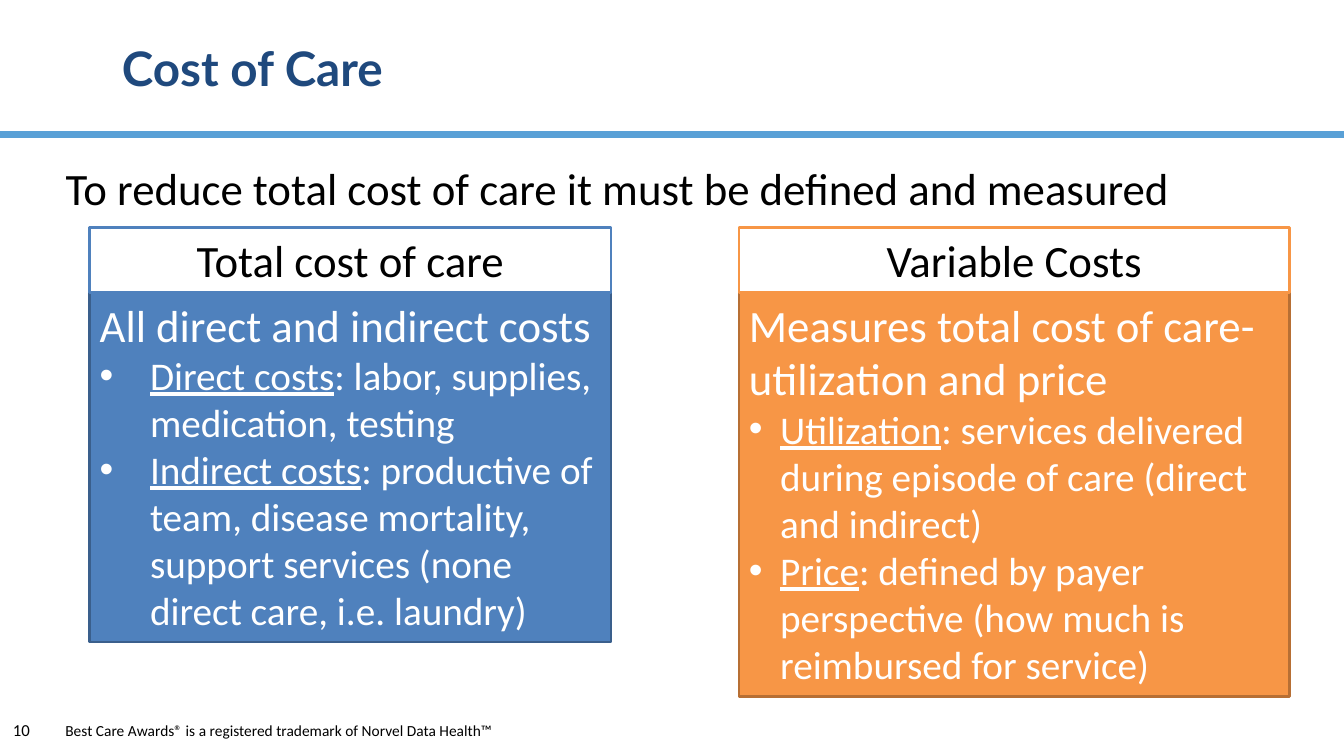
from lxml.etree import SubElement
from pptx import Presentation
from pptx.dml.color import RGBColor
from pptx.enum.shapes import MSO_CONNECTOR, MSO_SHAPE
from pptx.enum.text import MSO_ANCHOR, MSO_AUTO_SIZE, PP_ALIGN
from pptx.oxml.ns import qn
from pptx.util import Inches, Pt

BLACK, WHITE, NAVY, SKY = "000000", "FFFFFF", "1F497D", "59A0D6"
HEADER_HEIGHT = 0.64
COLUMNS = [
    dict(
        box=(0.89, 2.26, 5.17, 4.11), color="4F81BD", edge="3A5F8C", indent=0.5,
        header="Total cost of care",
        lead="All direct and indirect costs",
        items=[
            ("Direct costs", ": labor, supplies, medication, testing"),
            ("Indirect costs", ": productive of team, disease mortality, "
             "support services (none direct care, i.e. laundry)"),
        ],
    ),
    dict(
        box=(7.33, 2.26, 5.46, 4.65), color="F79646", edge="B76F34", indent=0.31,
        header="Variable Costs",
        lead="Measures total cost of care- utilization and price",
        items=[
            ("Utilization", ": services delivered during episode of care "
             "(direct and indirect)"),
            ("Price", ": defined by payer perspective "
             "(how much is reimbursed for service)"),
        ],
    ),
]


def rgb(hex_color):
    return RGBColor.from_string(hex_color)


def set_bullet(paragraph, indent):
    """Give a hanging bullet, or no bullet when indent is 0."""
    props = paragraph._p.get_or_add_pPr()
    props.set("marL", str(Inches(indent)))
    props.set("indent", str(-Inches(indent)))
    if indent:
        SubElement(props, qn("a:buFont")).set("typeface", "Arial")
        SubElement(props, qn("a:buChar")).set("char", "•")
    else:
        SubElement(props, qn("a:buNone"))


def write(paragraph, *parts, size=32, color=BLACK, font="Calibri", bold=False,
          align=PP_ALIGN.LEFT, spacing=None, indent=0, underline_first=False):
    set_bullet(paragraph, indent)
    paragraph.alignment = align
    paragraph.space_before = Pt(0)
    paragraph.line_spacing = spacing
    paragraph.font.size = Pt(size)
    for number, part in enumerate(parts):
        run = paragraph.add_run()
        run.text = part
        run.font.name = font
        run.font.size = Pt(size)
        run.font.bold = bold
        run.font.color.rgb = rgb(color)
        run.font.underline = underline_first and number == 0


def place(shape, box):
    shape.left, shape.top, shape.width, shape.height = map(Inches, box)


def add_panel(slide, box, fill, edge):
    panel = slide.shapes.add_shape(MSO_SHAPE.RECTANGLE, *map(Inches, box))
    panel.shadow.inherit = False
    panel.fill.solid()
    panel.fill.fore_color.rgb = rgb(fill)
    panel.line.color.rgb = rgb(edge)
    panel.line.width = Pt(2)
    panel.text_frame.word_wrap = True
    panel.text_frame.vertical_anchor = MSO_ANCHOR.TOP
    return panel.text_frame


def add_cost_column(slide, box, color, edge, indent, header, lead, items):
    left, top, width, height = box
    details = add_panel(
        slide, (left, top + HEADER_HEIGHT, width, height - HEADER_HEIGHT), color, edge)
    write(details.paragraphs[0], lead, color=WHITE)
    for term, meaning in items:
        write(details.add_paragraph(), term, meaning, size=28, color=WHITE,
              indent=indent, underline_first=True)
    heading = add_panel(slide, (left, top, width, HEADER_HEIGHT), WHITE, color)
    write(heading.paragraphs[0], header, align=PP_ALIGN.CENTER)


def add_heading(slide, title_box, statement_box):
    title, statement = slide.shapes.title, slide.placeholders[1]
    for holder, box in ((title, title_box), (statement, statement_box)):
        place(holder, box)
        holder.text_frame.word_wrap = True
        holder.text_frame.auto_size = MSO_AUTO_SIZE.NONE
    title.text_frame.vertical_anchor = MSO_ANCHOR.MIDDLE
    write(title.text_frame.paragraphs[0], "Cost of Care", size=34, color=NAVY,
          font="Lato", bold=True, spacing=0.9)
    write(statement.text_frame.paragraphs[0],
          "To reduce total cost of care it must be defined and measured", spacing=0.9)


def add_rule(slide, left, top, width):
    rule = slide.shapes.add_connector(
        MSO_CONNECTOR.STRAIGHT, Inches(left), Inches(top), Inches(left + width), Inches(top))
    rule.line.color.rgb = rgb(SKY)
    rule.line.width = Pt(5)
    SubElement(rule._element.spPr, qn("a:effectLst"))


def add_note(slide, box, text, size, wrap):
    note = slide.shapes.add_textbox(*map(Inches, box)).text_frame
    note.word_wrap = wrap
    write(note.paragraphs[0], text, size=size)


def main():
    deck = Presentation()
    deck.slide_width, deck.slide_height = Inches(13.33), Inches(7.5)
    slide = deck.slides.add_slide(deck.slide_layouts[1])
    add_rule(slide, 0, 1.33, 13.33)
    add_note(slide, (0.03, 7.09, 1.13, 0.4), "10", size=12, wrap=True)
    add_note(slide, (0.55, 7.1, 4.53, 0.29),
             "Best Care Awards® is a registered trademark of Norvel Data Health™",
             size=11, wrap=False)
    add_heading(slide, (1.11, 0.14, 8.43, 1.13), (0.55, 1.6, 12.78, 5.26))
    for column in COLUMNS:
        add_cost_column(slide, **column)
    deck.save("out.pptx")


if __name__ == "__main__":
    main()
